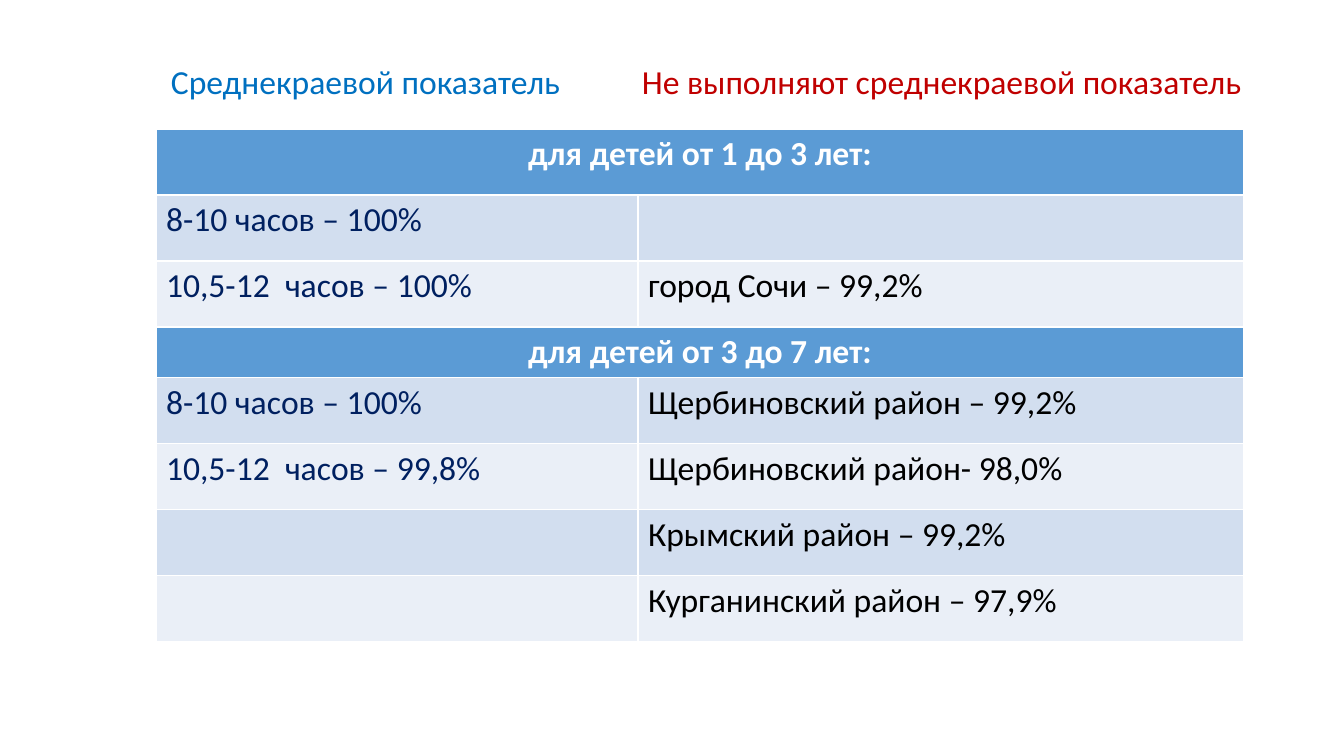
from pptx import Presentation
from pptx.dml.color import RGBColor
from pptx.enum.text import MSO_AUTO_SIZE, PP_ALIGN
from pptx.util import Emu, Pt

WHITE = RGBColor(0xFF, 0xFF, 0xFF)
BLACK = RGBColor(0x00, 0x00, 0x00)
NAVY = RGBColor(0x00, 0x20, 0x60)
BLUE = RGBColor(0x00, 0x70, 0xC0)
RED = RGBColor(0xC0, 0x00, 0x00)
HEADER_FILL = RGBColor(0x5B, 0x9B, 0xD5)
BAND_FILLS = [RGBColor(0xD2, 0xDE, 0xEF), RGBColor(0xEA, 0xEF, 0xF7)]

TABLE_LEFT = 156
COLUMN_WIDTHS = [482, 606]
ROW_HEIGHT = 66


def px(length):
    return Emu(round(length * 12192000 / 1344))


def write(frame, text, color, bold=False, align=PP_ALIGN.LEFT):
    frame.text = text
    paragraph = frame.paragraphs[0]
    paragraph.alignment = align
    for run in paragraph.runs:
        run.font.name = "Calibri"
        run.font.size = Pt(24)
        run.font.bold = bold
        run.font.color.rgb = color


prs = Presentation()
prs.slide_width, prs.slide_height = px(1344), px(756)
slide = prs.slides.add_slide(prs.slide_layouts[6])

# Column captions: left, width, right margin, text, colour, alignment
captions = [
    (156, 433, 24, "Среднекраевой показатель", BLUE, PP_ALIGN.CENTER),
    (632, 649, 10, "Не выполняют среднекраевой показатель", RED, PP_ALIGN.LEFT),
]
for left, width, right_margin, text, color, align in captions:
    caption = slide.shapes.add_textbox(px(left), px(56), px(width), px(50)).text_frame
    caption.word_wrap = True
    caption.auto_size = MSO_AUTO_SIZE.SHAPE_TO_FIT_TEXT
    caption.margin_right = px(right_margin)
    write(caption, text, color, align=align)

# Age groups: top, header height, header, rows of (regional average, below average)
age_groups = [
    (129, 66, "для детей от 1 до 3 лет:", [
        ("8-10 часов – 100%", ""),
        ("10,5-12  часов – 100%", "город Сочи – 99,2%"),
    ]),
    (327, 34, "для детей от 3 до 7 лет:", [
        ("8-10 часов – 100%", "Щербиновский район – 99,2%"),
        ("10,5-12  часов – 99,8%", "Щербиновский район- 98,0%"),
        ("", "Крымский район – 99,2%"),
        ("", "Курганинский район – 97,9%"),
    ]),
]
for top, header_height, header, rows in age_groups:
    table = slide.shapes.add_table(
        len(rows) + 1, 2, px(TABLE_LEFT), px(top), px(sum(COLUMN_WIDTHS)),
        px(header_height + ROW_HEIGHT * len(rows))).table
    for column, width in zip(table.columns, COLUMN_WIDTHS):
        column.width = px(width)

    table.rows[0].height = px(header_height)
    header_cell = table.cell(0, 0)
    header_cell.merge(table.cell(0, 1))
    header_cell.fill.solid()
    header_cell.fill.fore_color.rgb = HEADER_FILL
    write(header_cell.text_frame, header, WHITE, bold=True, align=PP_ALIGN.CENTER)

    for r, row in enumerate(rows, start=1):
        table.rows[r].height = px(ROW_HEIGHT)
        for c, (text, color) in enumerate(zip(row, [NAVY, BLACK])):
            cell = table.cell(r, c)
            cell.fill.solid()
            cell.fill.fore_color.rgb = BAND_FILLS[(r - 1) % 2]
            write(cell.text_frame, text, color)

prs.save("out.pptx")
